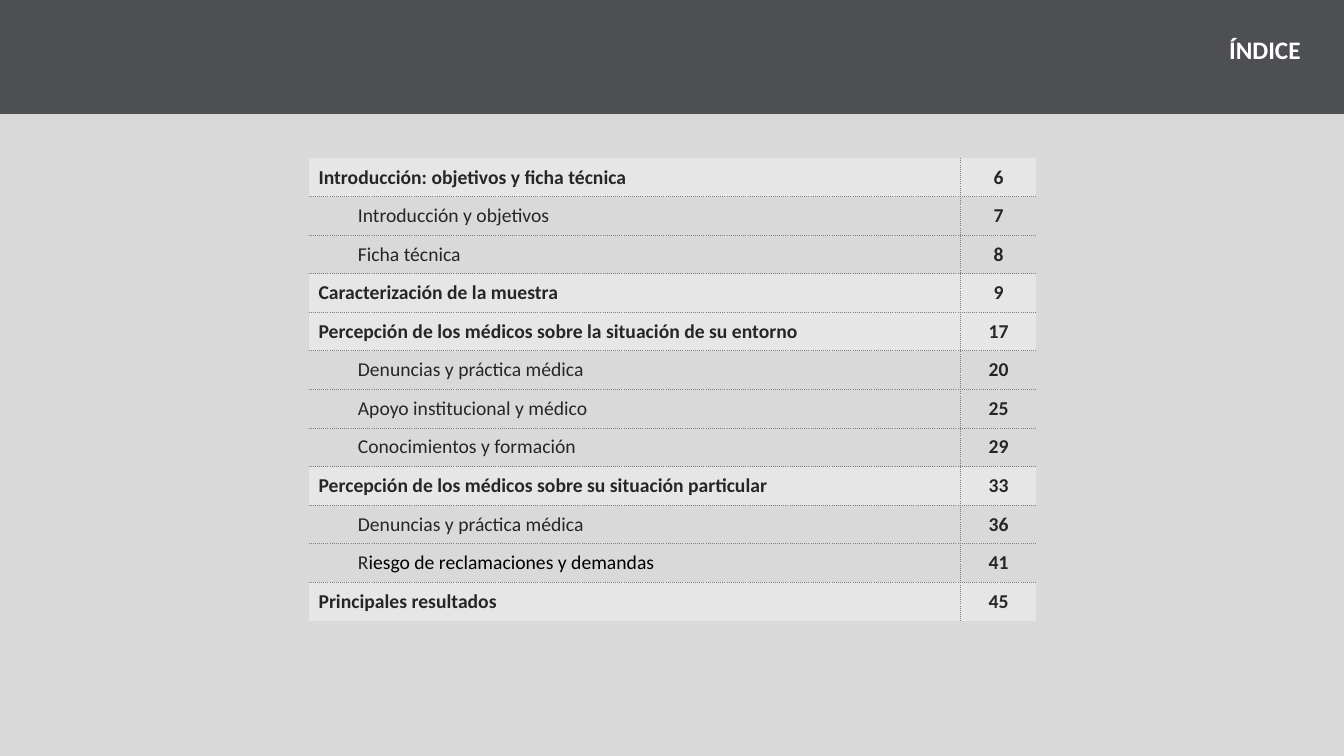
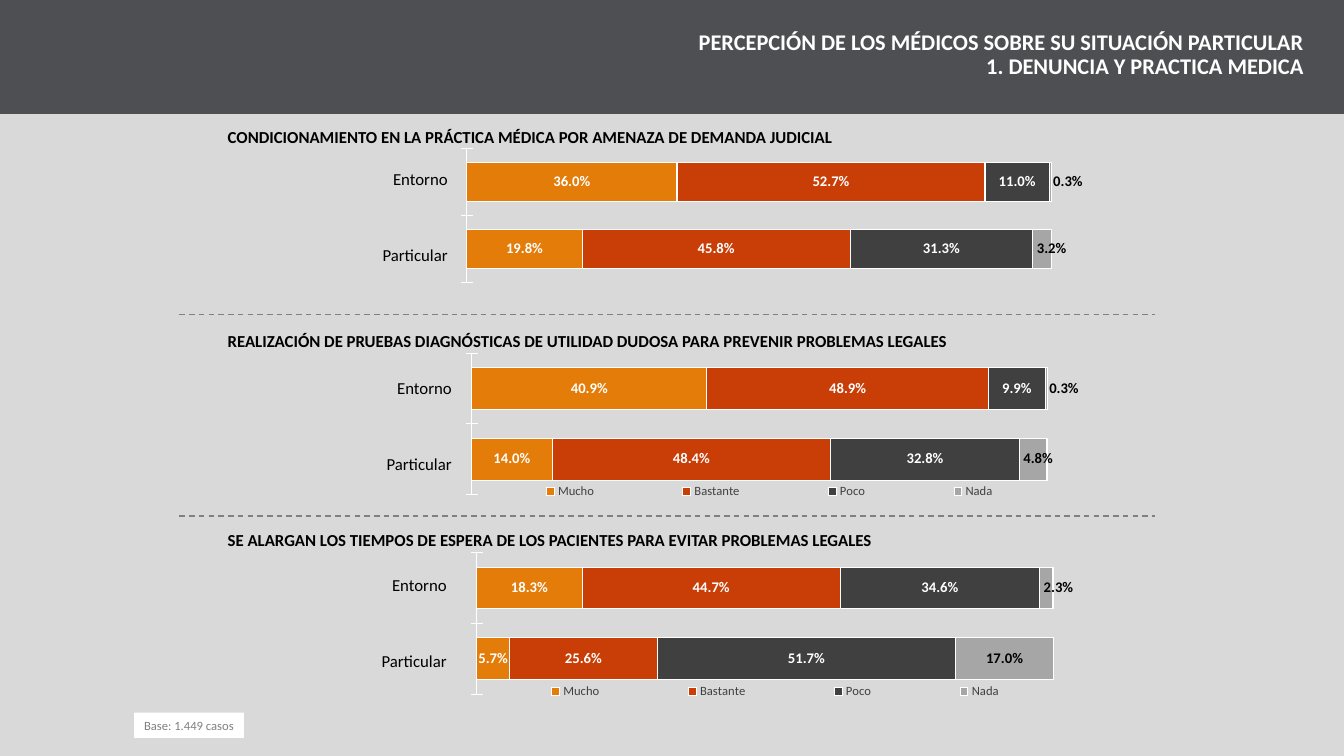
from lxml import etree
from pptx import Presentation
from pptx.chart.data import CategoryChartData
from pptx.dml.color import RGBColor
from pptx.enum.chart import XL_CHART_TYPE, XL_LABEL_POSITION, XL_LEGEND_POSITION, XL_TICK_LABEL_POSITION, XL_TICK_MARK
from pptx.enum.dml import MSO_LINE
from pptx.enum.shapes import MSO_CONNECTOR, MSO_SHAPE
from pptx.enum.text import MSO_ANCHOR, MSO_AUTO_SIZE, PP_ALIGN
from pptx.oxml import parse_xml
from pptx.oxml.ns import nsdecls, qn
from pptx.util import Inches, Pt

STACKED = XL_CHART_TYPE.BAR_STACKED
MID, BASE = XL_LABEL_POSITION.CENTER, XL_LABEL_POSITION.INSIDE_BASE
BOTTOM = XL_LEGEND_POSITION.BOTTOM
NO_LABEL = XL_TICK_LABEL_POSITION.NONE
CROSS, NO_TICK = XL_TICK_MARK.CROSS, XL_TICK_MARK.NONE
DASH = MSO_LINE.DASH
LINE, RECT = MSO_CONNECTOR.STRAIGHT, MSO_SHAPE.RECTANGLE
MIDDLE, TOP = MSO_ANCHOR.MIDDLE, MSO_ANCHOR.TOP
FIXED = MSO_AUTO_SIZE.NONE
LEFT, CENTER, RIGHT = PP_ALIGN.LEFT, PP_ALIGN.CENTER, PP_ALIGN.RIGHT

BLACK = RGBColor(0, 0, 0)
WHITE = RGBColor(255, 255, 255)
INK = RGBColor(0x26, 0x26, 0x26)
SLATE = RGBColor(0x4D, 0x4F, 0x53)
PAPER = RGBColor(0xD9, 0xD9, 0xD9)
PALE = RGBColor(0xE7, 0xE6, 0xE6)
GRAY = RGBColor(0x80, 0x80, 0x80)
DARK = RGBColor(0x40, 0x40, 0x40)
ORANGE = RGBColor(0xE4, 0x7C, 0x0A)
RUST = RGBColor(0xC9, 0x3E, 0x07)
SILVER = RGBColor(0xA6, 0xA6, 0xA6)

FONT = "Calibri"
WIDTH, HEIGHT = 13.33, 7.5
SCALE = (("Mucho", ORANGE, WHITE, MID), ("Bastante", RUST, WHITE, MID),
         ("Poco", DARK, WHITE, MID), ("Nada", SILVER, BLACK, BASE))
GROUPS = ("Entorno", "Particular")

INDEX = (
    (0, ("Introducción: objetivos y ficha técnica",), 6),
    (1, ("Introducción y objetivos",), 7),
    (1, ("Ficha técnica",), 8),
    (0, ("Caracterización de la muestra",), 9),
    (0, ("Percepción de los médicos sobre la situación de su entorno",), 17),
    (1, ("Denuncias y práctica médica",), 20),
    (1, ("Apoyo institucional y médico",), 25),
    (1, ("Conocimientos y formación",), 29),
    (0, ("Percepción de los médicos sobre su situación particular",), 33),
    (1, ("Denuncias y práctica médica",), 36),
    (1, ("R", "iesgo de reclamaciones y demandas"), 41),
    (0, ("Principales resultados",), 45),
)

PANELS = (
    ("CONDICIONAMIENTO EN LA PRÁCTICA MÉDICA POR AMENAZA DE DEMANDA JUDICIAL",
     1.21, (4.53, 1.46, 6.21, 1.48), (2.6, 1.62), False,
     ((36, 19.8), (52.7, 45.8), (11, 31.3), (0.3, 3.2))),
    ("REALIZACIÓN DE PRUEBAS DIAGNÓSTICAS DE UTILIDAD DUDOSA PARA PREVENIR PROBLEMAS LEGALES",
     3.23, (4.58, 3.49, 6.12, 1.56), (2.64, 3.7), True,
     ((40.9, 14), (48.9, 48.4), (9.9, 32.8), (0.3, 4.8))),
    ("SE ALARGAN LOS TIEMPOS DE ESPERA DE LOS PACIENTES PARA EVITAR PROBLEMAS LEGALES",
     5.21, (4.63, 5.47, 6.12, 1.56), (2.59, 5.65), True,
     ((18.3, 5.7), (44.7, 25.6), (34.6, 51.7), (2.3, 17))),
)


def inch(*sizes):
    return [Inches(size) for size in sizes]


def style(font, size, color, bold=False):
    font.name, font.size, font.bold = FONT, Pt(size), bold
    font.color.rgb = color


def place(part, spot, inner, *area):
    old = part.find(qn("c:layout"))
    if old is not None:
        part.remove(old)
    layout = parse_xml(f"<c:layout {nsdecls('c')}><c:manualLayout/></c:layout>")
    pairs = [("layoutTarget", "inner")] if inner else []
    pairs += [("xMode", "edge"), ("yMode", "edge"), *zip("xywh", area)]
    for tag, value in pairs:
        etree.SubElement(layout[0], qn("c:" + tag)).set("val", str(value))
    part.insert(spot, layout)


def border(cell, side, shown):
    props = cell._tc.get_or_add_tcPr()
    edge = etree.SubElement(props, qn("a:ln" + side), w=str(Pt(0.75)))
    if shown:
        fill = etree.SubElement(edge, qn("a:solidFill"))
        etree.SubElement(fill, qn("a:srgbClr"), val=str(GRAY))
        etree.SubElement(edge, qn("a:prstDash"), val="sysDot")
    else:
        etree.SubElement(edge, qn("a:noFill"))


class Deck:
    def __init__(self):
        self.file = Presentation()
        self.file.slide_width, self.file.slide_height = inch(WIDTH, HEIGHT)
        self.layout = self.file.slide_layouts[5]
        fill = self.layout.background.fill
        fill.solid()
        fill.fore_color.rgb = PAPER
        self.slide = None

    def page(self, title, size, at, lead=None):
        first = self.slide is None
        self.slide = self.file.slides.add_slide(self.layout)
        if first:
            band = self.rect((0, 0, WIDTH, 1.13), SLATE)
            self.layout.shapes.element.insert(2, band.element)
        head = self.slide.shapes.title
        head.left, head.top, head.width, head.height = inch(*at)
        self.put(head.text_frame, title, size, WHITE, True, RIGHT, MIDDLE)
        head.text_frame.margin_left = head.text_frame.margin_right = 0
        for para in head.text_frame.paragraphs:
            para.line_spacing = lead

    def put(self, frame, text, size, color, bold=False, align=LEFT, anchor=TOP, gap=0):
        frame.text = text
        frame.word_wrap = True
        frame.auto_size = FIXED
        frame.vertical_anchor = anchor
        for para in frame.paragraphs:
            para.alignment = align
            para.space_before, para.space_after = Pt(0), Pt(gap)
            style(para.font, size, color, bold)

    def text(self, at, text, size, color, **look):
        box = self.slide.shapes.add_textbox(*inch(*at))
        self.put(box.text_frame, text, size, color, **look)

    def rect(self, at, color):
        shape = self.slide.shapes.add_shape(RECT, *inch(*at))
        shape.shadow.inherit = False
        shape.fill.solid()
        shape.fill.fore_color.rgb = color
        shape.line.fill.background()
        return shape

    def tag(self, at, text):
        shape = self.rect(at, WHITE)
        self.put(shape.text_frame, text, 9, GRAY, anchor=MIDDLE)
        shape.text_frame.word_wrap = False

    def rule(self, left, right, top):
        line = self.slide.shapes.add_connector(LINE, *inch(left, top, right, top))
        line.line.color.rgb = GRAY
        line.line.width = Pt(1)
        line.line.dash_style = DASH
        etree.SubElement(line.element.spPr, qn("a:effectLst"))

    def table(self, at, widths, rows):
        table = self.slide.shapes.add_table(len(rows), len(widths), *inch(*at)).table
        table.first_row = table.horz_banding = False
        for column, width in zip(table.columns, widths):
            column.width = Inches(width)
        last = len(rows) - 1
        for row, (level, parts, page) in enumerate(rows):
            for col, texts in enumerate((parts, (str(page),))):
                cell = table.cell(row, col)
                sides = (("L", col == 1), ("R", col == 0), ("T", row > 0), ("B", row < last))
                for side, shown in sides:
                    border(cell, side, shown)
                if level:
                    cell.fill.background()
                else:
                    cell.fill.solid()
                    cell.fill.fore_color.rgb = PALE
                cell.vertical_anchor = MIDDLE
                if level and col == 0:
                    cell.margin_left = Inches(0.49)
                para = cell.text_frame.paragraphs[0]
                para.alignment = CENTER if col else LEFT
                style(para.font, 14, INK, col == 1 or not level)
                for text, color in zip(texts, (INK, BLACK)):
                    run = para.add_run()
                    run.text = text
                    style(run.font, 14, color, col == 1 or not level)

    def bars(self, at, values, legend):
        data = CategoryChartData(number_format="0.0\\%")
        data.categories = GROUPS
        for (name, *_), row in zip(SCALE, values):
            data.add_series(name, row)
        chart = self.slide.shapes.add_chart(STACKED, *inch(*at), data).chart
        style(chart.font, 12, BLACK)
        chart.has_title = False
        root = chart.element
        clear = f"<c:spPr {nsdecls('c', 'a')}><a:noFill/><a:ln><a:noFill/></a:ln></c:spPr>"
        root.find(qn("c:chart")).addnext(parse_xml(clear))
        place(root.find(".//" + qn("c:plotArea")), 0, True, 0.016, 0.008, 0.935, 0.901)
        plot = chart.plots[0]
        plot.gap_width, plot.overlap = 70, 100
        plot.vary_by_categories = False
        for series, (_, color, ink, spot) in zip(plot.series, SCALE):
            series.format.fill.solid()
            series.format.fill.fore_color.rgb = color
            series.format.line.color.rgb = WHITE
            series.format.line.width = Pt(0.75)
            labels = series.data_labels
            labels.show_value = True
            labels.number_format = "0.0\\%"
            labels.number_format_is_linked = False
            labels.position = spot
            style(labels.font, 10.5, ink, True)
            for point, value in enumerate(series.values):
                if spot == BASE and value > 10:
                    label = series.points[point].data_label
                    style(label.font, 10.5, ink, True)
                    label.position = MID
        axis = chart.category_axis
        axis.reverse_order = True
        axis.tick_label_position = NO_LABEL
        axis.major_tick_mark, axis.minor_tick_mark = CROSS, NO_TICK
        axis.format.line.color.rgb = WHITE
        axis.format.line.width = Pt(0.75)
        scale = chart.value_axis
        scale.minimum_scale, scale.maximum_scale = 0, 100
        scale.has_major_gridlines = False
        scale.visible = False
        chart.has_legend = legend
        if legend:
            chart.legend.position = BOTTOM
            chart.legend.include_in_layout = False
            style(chart.legend.font, 9, DARK)
            place(root.find(".//" + qn("c:legend")), 1, False, 0, 0.83, 1, 0.12)

    def panel(self, title, top, area, names, legend, values):
        self.text((2.16, top, 7.86, 0.3), title, 12, BLACK, bold=True)
        self.bars(area, values, legend)
        self.text((*names, 1.94, 1.08), "\n".join(GROUPS), 12, BLACK, align=RIGHT, gap=40)


def main():
    deck = Deck()
    deck.page("ÍNDICE", 18, (11.19, 0.29, 1.71, 0.4))
    deck.table((3.06, 1.57, 7.22, 4.59), (6.47, 0.75), INDEX)
    deck.page("PERCEPCIÓN DE LOS MÉDICOS SOBRE SU SITUACIÓN PARTICULAR\n"
              "1. DENUNCIA Y PRACTICA MEDICA", 16, (4.5, 0.23, 8.43, 0.64), Pt(17))
    for panel in PANELS:
        deck.panel(*panel)
    for top in (3.12, 5.12):
        deck.rule(1.78, 11.46, top)
    deck.tag((1.33, 7.07, 1.09, 0.25), "Base: 1.449 casos")
    deck.file.save("out.pptx")


if __name__ == "__main__":
    main()
